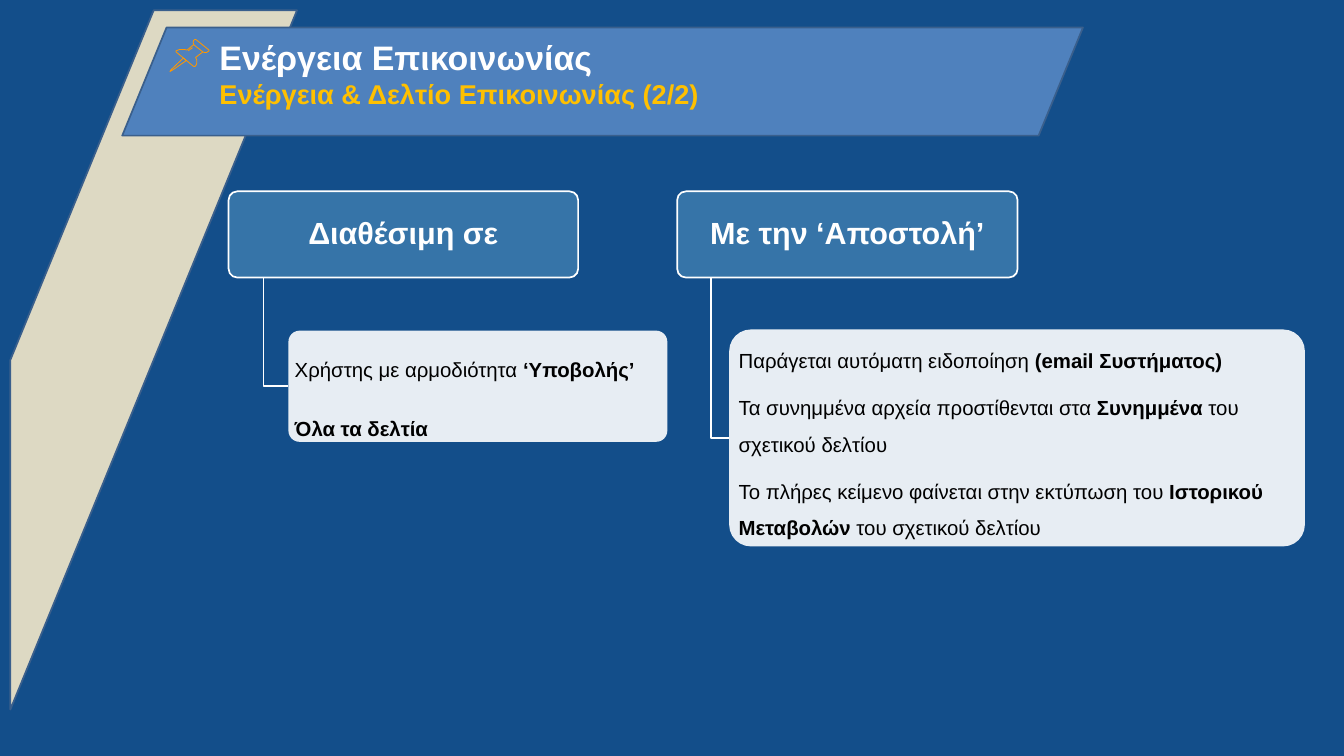
import lxml.etree
import pptx
import pptx.dml.color
import pptx.enum.shapes
import pptx.enum.text
import pptx.oxml.ns
import pptx.util

Pt = pptx.util.Pt
SHAPES = pptx.enum.shapes.MSO_SHAPE
ALIGN = pptx.enum.text.PP_ALIGN
ANCHOR = pptx.enum.text.MSO_ANCHOR

COLORS = {
    "background": "134E8A",
    "stripe": "DDD9C3",
    "banner": "4F81BD",
    "outline": "3A5F8C",
    "header": "3674A8",
    "white": "FFFFFF",
    "black": "000000",
    "gold": "FFC000",
    "pin": "FF9800",
}

HEADER_TEXT = {
    "font": {"name": "Arial", "size": Pt(36), "bold": True},
    "color": "white",
    "paragraph": {"alignment": ALIGN.CENTER, "line_spacing": 0.9},
    "margins": (5, 3.6),
}

BRANCHES = [
    {
        "title": "Διαθέσιμη σε",
        "header": (269.3, 225.4, 411.8, 101.5),
        "panel": (339.8, 389.5, 446.4, 131),
        "line_spacing": 2.0,
        "lines": [
            [("Χρήστης με αρμοδιότητα ", False), ("‘Υποβολής’", True)],
            [("Όλα τα δελτία", True)],
        ],
    },
    {
        "title": "Με την ‘Αποστολή’",
        "header": (797.8, 225.4, 401, 101.5),
        "panel": (859, 388.1, 678.2, 255.6),
        "line_spacing": 1.5,
        "lines": [
            [("Παράγεται αυτόματη ειδοποίηση ", False), ("(email Συστήματος)", True)],
            [("Τα συνημμένα αρχεία προστίθενται στα ", False), ("Συνημμένα ", True),
             ("του σχετικού δελτίου", False)],
            [("Το πλήρες κείμενο φαίνεται στην εκτύπωση του ", False),
             ("Ιστορικού Μεταβολών ", True), ("του σχετικού δελτίου", False)],
        ],
    },
]

PIN_NEEDLE = [(216, 68.4), (201.6, 82.1), (200.2, 84.2), (203, 82.8), (219.6, 71.3)]
PIN_HEAD = [(228.2, 52.6), (239, 61.2), (241.2, 61.9), (243.3, 61.9), (245.5, 60.5),
            (246.2, 59.8), (246.2, 59), (231.1, 46.8), (229.7, 46.5), (228.2, 47.5),
            (227.5, 49.7)]
PIN_BODY = [(228.2, 52.6), (220.3, 59), (217.4, 58.3), (211.7, 58.3), (207.4, 59.8),
            (207.4, 61.2), (227.5, 77.8), (229, 78.5), (230.4, 77.8), (231.8, 74.9),
            (231.8, 70.6), (230.4, 67.7), (239, 61.2)]
PIN_GLINT = (221.8, 59.8, 226.8, 56.2)


def rgb(name):
    return pptx.dml.color.RGBColor.from_string(COLORS[name])


def apply_format(target, values):
    for name, value in values.items():
        setattr(target, name, value)


def set_line(shape, color, width):
    shape.line.color.rgb = rgb(color)
    shape.line.width = Pt(width)


def add_run(paragraph, text, font, color):
    run = paragraph.add_run()
    run.text = text
    apply_format(run.font, font)
    run.font.color.rgb = rgb(color)


def add_block(slide, kind, box, fill, line=None, adjustment=None):
    shape = slide.shapes.add_shape(kind, *map(Pt, box))
    shape.shadow.inherit = False
    shape.fill.solid()
    shape.fill.fore_color.rgb = rgb(fill)
    if line:
        set_line(shape, line, 2)
    else:
        shape.line.fill.background()
    if adjustment is not None:
        shape.adjustments[0] = adjustment
    return shape


def add_outline(slide, points, color, width, close):
    tenths = [(x * 10, y * 10) for x, y in points]
    builder = slide.shapes.build_freeform(*tenths[0], scale=Pt(0.1))
    builder.add_line_segments(tenths[1:], close=close)
    shape = builder.convert_to_shape()
    shape.shadow.inherit = False
    shape.fill.background()
    set_line(shape, color, width)


def write_text(shape, lines, style):
    side, top = map(Pt, style["margins"])
    frame = shape.text_frame
    apply_format(frame, {
        "word_wrap": True, "vertical_anchor": ANCHOR.MIDDLE,
        "margin_left": side, "margin_right": side,
        "margin_top": top, "margin_bottom": top,
    })
    for index, runs in enumerate(lines):
        paragraph = frame.add_paragraph() if index else frame.paragraphs[0]
        apply_format(paragraph, style["paragraph"])
        for text, bold in runs:
            add_run(paragraph, text, {**style["font"], "bold": bold}, style["color"])


def make_translucent(shape, percent):
    color = shape.fill._xPr.find(".//" + pptx.oxml.ns.qn("a:srgbClr"))
    alpha = lxml.etree.SubElement(color, pptx.oxml.ns.qn("a:alpha"))
    alpha.set("val", str(percent * 1000))


def add_branch(slide, branch):
    left, top, width, height = branch["header"]
    panel_left, panel_top, _, panel_height = branch["panel"]
    header = add_block(slide, SHAPES.ROUNDED_RECTANGLE, branch["header"],
                       "header", "white", 0.1)
    write_text(header, [[(branch["title"], True)]], HEADER_TEXT)

    stem = left + width * 0.1
    middle = panel_top + panel_height / 2
    add_outline(slide, [(stem, top + height), (stem, middle), (panel_left, middle)],
                "white", 2, False)

    panel = add_block(slide, SHAPES.ROUNDED_RECTANGLE, branch["panel"],
                      "white", adjustment=0.1)
    make_translucent(panel, 90)
    write_text(panel, branch["lines"], {
        "font": {"name": "Arial", "size": Pt(24)},
        "color": "black",
        "paragraph": {"alignment": ALIGN.LEFT, "line_spacing": branch["line_spacing"],
                      "space_after": Pt(12)},
        "margins": (3.6, 2.2),
    })


def add_pin(slide):
    for points, close in ((PIN_NEEDLE, True), (PIN_HEAD, True), (PIN_BODY, False)):
        add_outline(slide, points, "pin", 0.96, close)
    glint = slide.shapes.add_connector(pptx.enum.shapes.MSO_CONNECTOR.STRAIGHT,
                                       *map(Pt, PIN_GLINT))
    set_line(glint, "pin", 0.96)
    lxml.etree.SubElement(glint._element.spPr, pptx.oxml.ns.qn("a:effectLst"))


def set_title(slide):
    title = slide.shapes.title
    apply_format(title, {"left": Pt(251.3), "top": Pt(39.6),
                         "width": Pt(982.8), "height": Pt(143.3)})
    frame = title.text_frame
    apply_format(frame, {"word_wrap": True, "vertical_anchor": ANCHOR.TOP,
                         "auto_size": pptx.enum.text.MSO_AUTO_SIZE.NONE})
    lines = [("Ενέργεια Επικοινωνίας", 40, "white"),
             ("Ενέργεια & Δελτίο Επικοινωνίας (2/2)", 32, "gold")]
    for index, (text, size, color) in enumerate(lines):
        paragraph = frame.add_paragraph() if index else frame.paragraphs[0]
        paragraph.alignment = ALIGN.LEFT
        add_run(paragraph, text, {"name": "Arial", "size": Pt(size), "bold": True}, color)
    slide.shapes._spTree.append(title._element)


def main():
    presentation = pptx.Presentation()
    apply_format(presentation, {"slide_width": Pt(1583.3), "slide_height": Pt(890.6)})
    slide = presentation.slides.add_slide(presentation.slide_layouts[5])
    slide.background.fill.solid()
    slide.background.fill.fore_color.rgb = rgb("background")

    add_block(slide, SHAPES.DIAGONAL_STRIPE, (12.2, 12.2, 337.7, 823.7),
              "stripe", "outline")
    add_block(slide, SHAPES.PARALLELOGRAM, (144, 32.4, 1131.8, 127.4),
              "banner", "outline", 0.41)
    add_pin(slide)
    set_title(slide)
    for branch in BRANCHES:
        add_branch(slide, branch)
    presentation.save("out.pptx")


if __name__ == "__main__":
    main()
